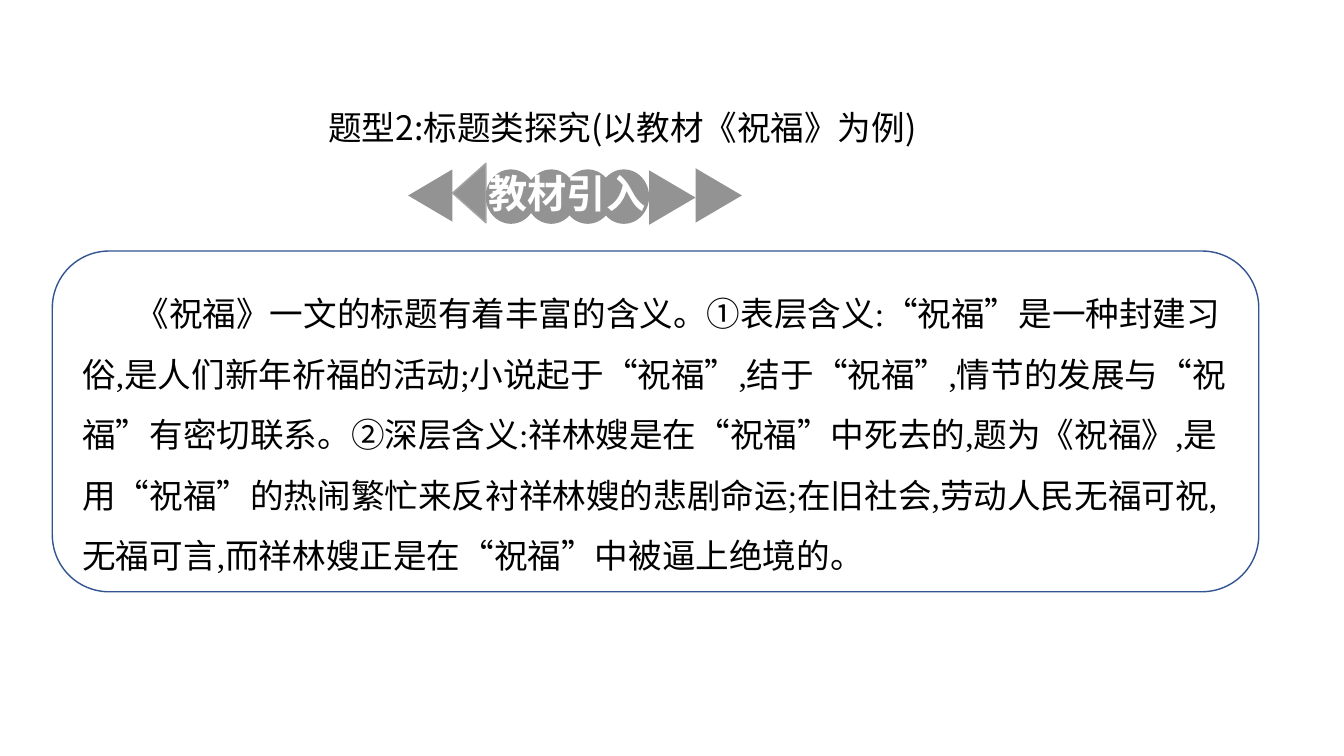
from pptx import Presentation
from pptx.dml.color import RGBColor
from pptx.enum.shapes import MSO_SHAPE
from pptx.enum.text import MSO_ANCHOR, PP_ALIGN
from pptx.oxml.ns import qn
from pptx.util import Pt

COLORS = {"gray": "939393", "edge": "A5A5A5", "blue": "325491",
          "black": "000000", "white": "FFFFFF"}
SANS = "Noto Sans CJK SC"
SERIF = "Times New Roman"

TITLE = "题型2:标题类探究(以教材《祝福》为例)"
LABEL = "教材引入"
BODY = ("《祝福》一文的标题有着丰富的含义。①表层含义:“祝福”是一种封建习俗,"
        "是人们新年祈福的活动;小说起于“祝福”,结于“祝福”,情节的发展与“祝福”有密切联系。"
        "②深层含义:祥林嫂是在“祝福”中死去的,题为《祝福》,"
        "是用“祝福”的热闹繁忙来反衬祥林嫂的悲剧命运;在旧社会,劳动人民无福可祝,"
        "无福可言,而祥林嫂正是在“祝福”中被逼上绝境的。")


def color(name):
    return RGBColor.from_string(COLORS[name])


def place(shape, box):
    shape.left, shape.top, shape.width, shape.height = map(Pt, box)


def write(shape, text, size, ink, latin=SANS, bold=False):
    """Fill a text shape with one paragraph and return that paragraph."""
    frame = shape.text_frame
    frame.word_wrap = True
    frame.vertical_anchor = MSO_ANCHOR.TOP
    frame.text = text
    para = frame.paragraphs[0]
    for run in para.runs:
        font = run.font
        font.size, font.bold, font.name = Pt(size), bold, latin
        font.color.rgb = color(ink)
        asian = run._r.get_or_add_rPr().makeelement(qn("a:ea"), {"typeface": SANS})
        font._element.find(qn("a:latin")).addnext(asian)
    return para


def add_text(slide, box, *args, **style):
    return write(slide.shapes.add_textbox(*map(Pt, box)), *args, **style)


def add_shape(slide, kind, box, fill=None, line=None, turn=0):
    shape = slide.shapes.add_shape(kind, *map(Pt, box))
    shape.shadow.inherit = False
    shape.rotation = turn
    if fill:
        shape.fill.solid()
        shape.fill.fore_color.rgb = color(fill)
    else:
        shape.fill.background()
    if line:
        shape.line.color.rgb = color(line)
        shape.line.width = Pt(1)
    else:
        shape.line.fill.background()


def add_banner(slide):
    """Draw the label on four discs between two pairs of arrowheads."""
    arrow = MSO_SHAPE.FLOWCHART_EXTRACT
    add_shape(slide, arrow, (313.9, 126, 42.5, 23.8), "gray", "edge", 270)
    for left in (347, 375.8, 401.8, 427.7):
        add_shape(slide, MSO_SHAPE.OVAL, (left, 121, 36, 38.9), "gray")
    para = add_text(slide, (342, 117.4, 129.6, 41), LABEL, 28, "white", bold=True)
    para.alignment = PP_ALIGN.LEFT
    add_shape(slide, arrow, (288.7, 123.8, 37.4, 31.7), "gray", turn=270)
    for left, top in ((460.8, 124.6), (493.9, 123.1)):
        add_shape(slide, arrow, (left, top, 38.9, 33.1), "gray", turn=90)


def main():
    deck = Presentation()
    deck.slide_width, deck.slide_height = Pt(960), Pt(540)
    slide = deck.slides.add_slide(deck.slide_layouts[5])

    title = slide.shapes.title
    place(title, (209.5, 72.7, 470.2, 36))
    write(title, TITLE, 24, "black").alignment = PP_ALIGN.CENTER

    add_banner(slide)

    para = add_text(slide, (51.8, 191.4, 832.3, 149), BODY, 24, "black", latin=SERIF)
    para.line_spacing = Pt(43.2)
    para._p.get_or_add_pPr().set("indent", str(Pt(38)))
    add_shape(slide, MSO_SHAPE.ROUNDED_RECTANGLE, (37.4, 179.3, 861.8, 243.4), line="blue")

    deck.save("out.pptx")


if __name__ == "__main__":
    main()
